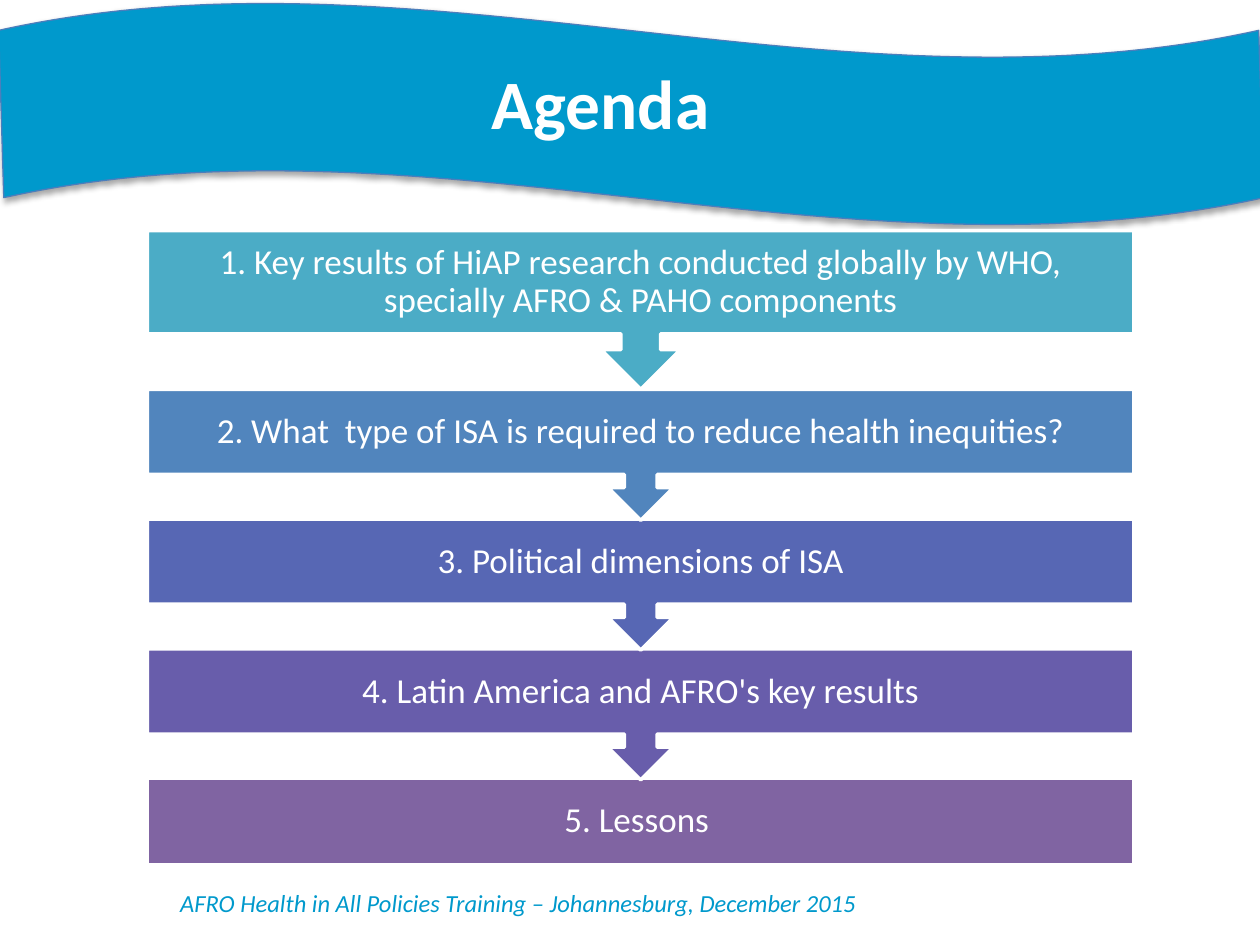
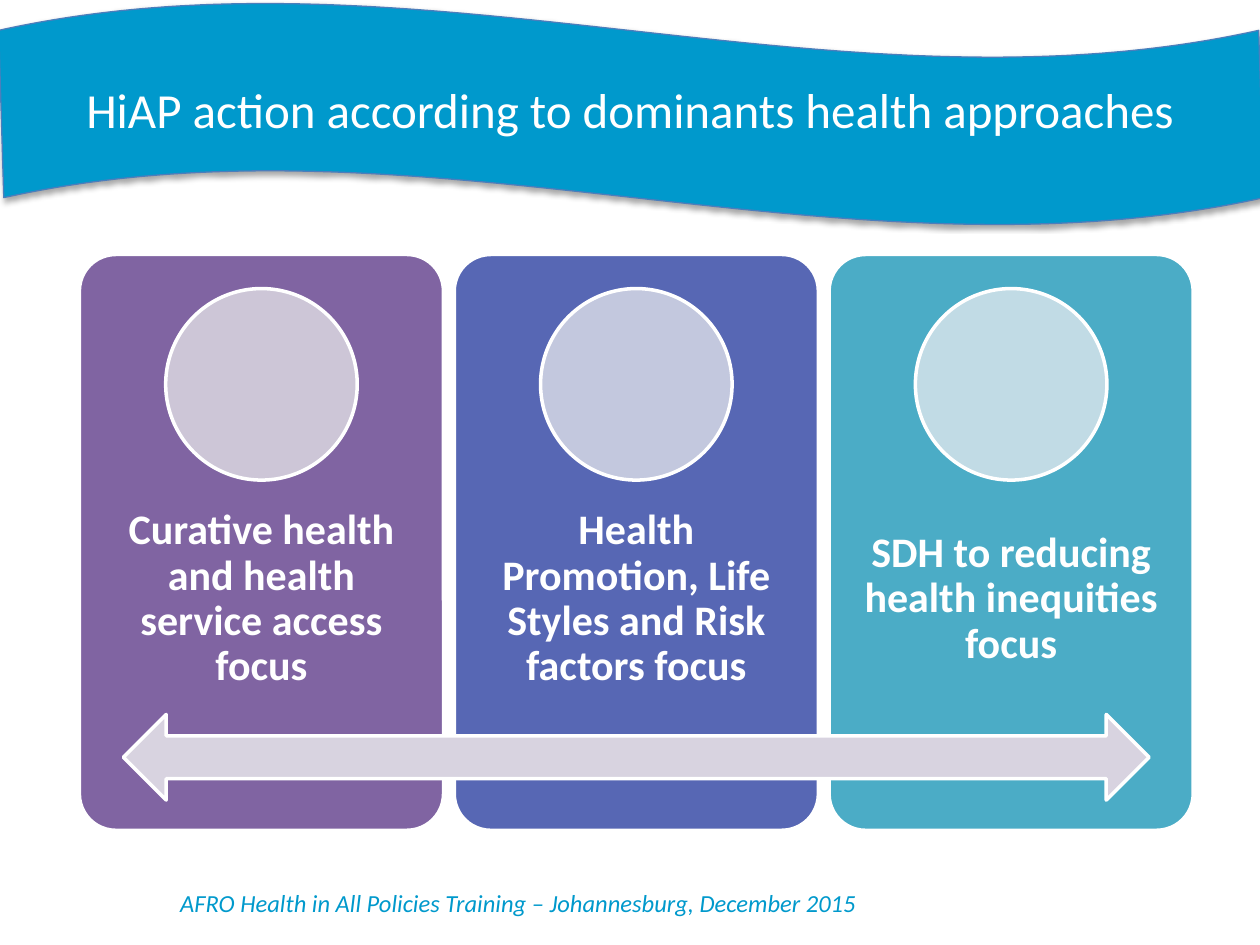
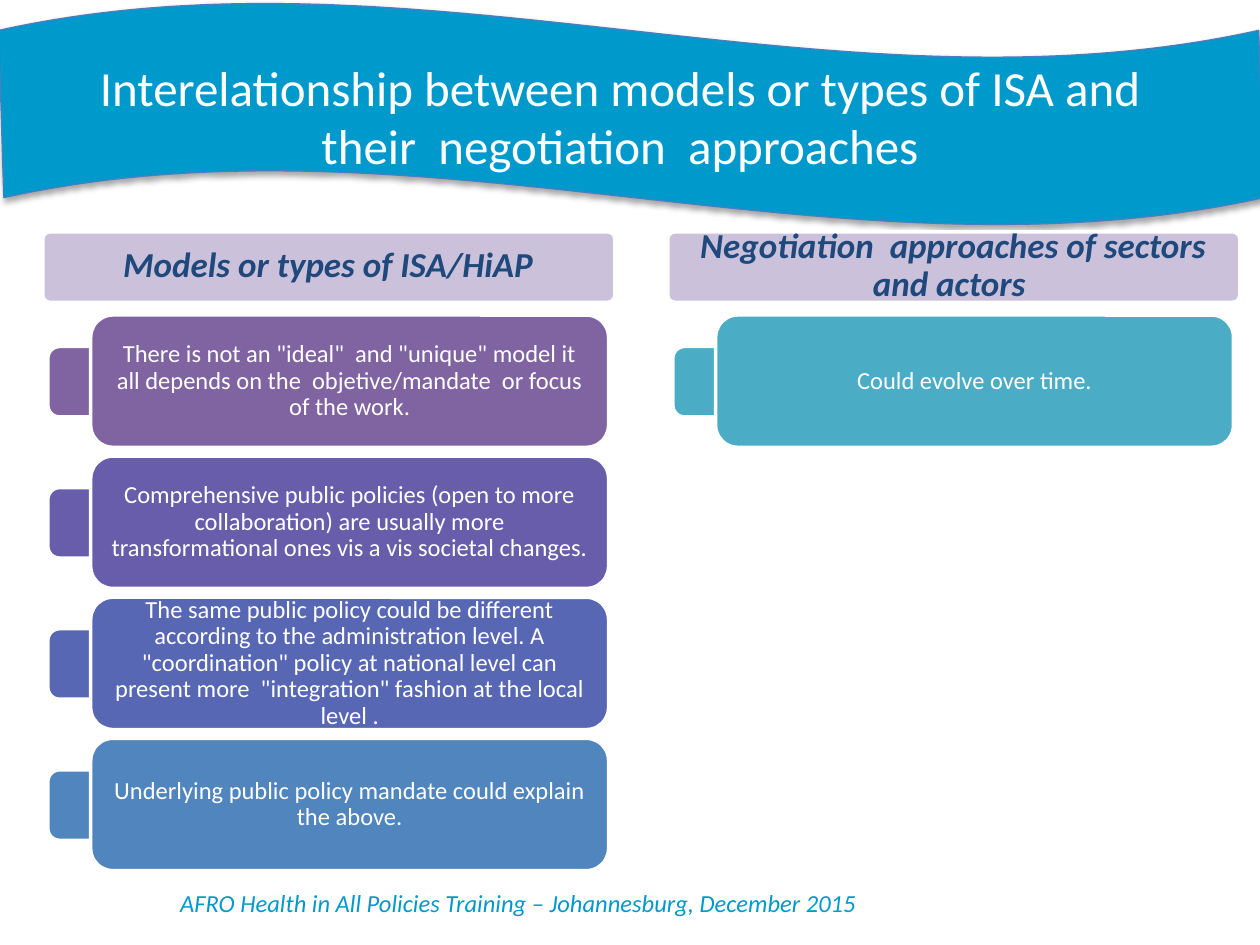
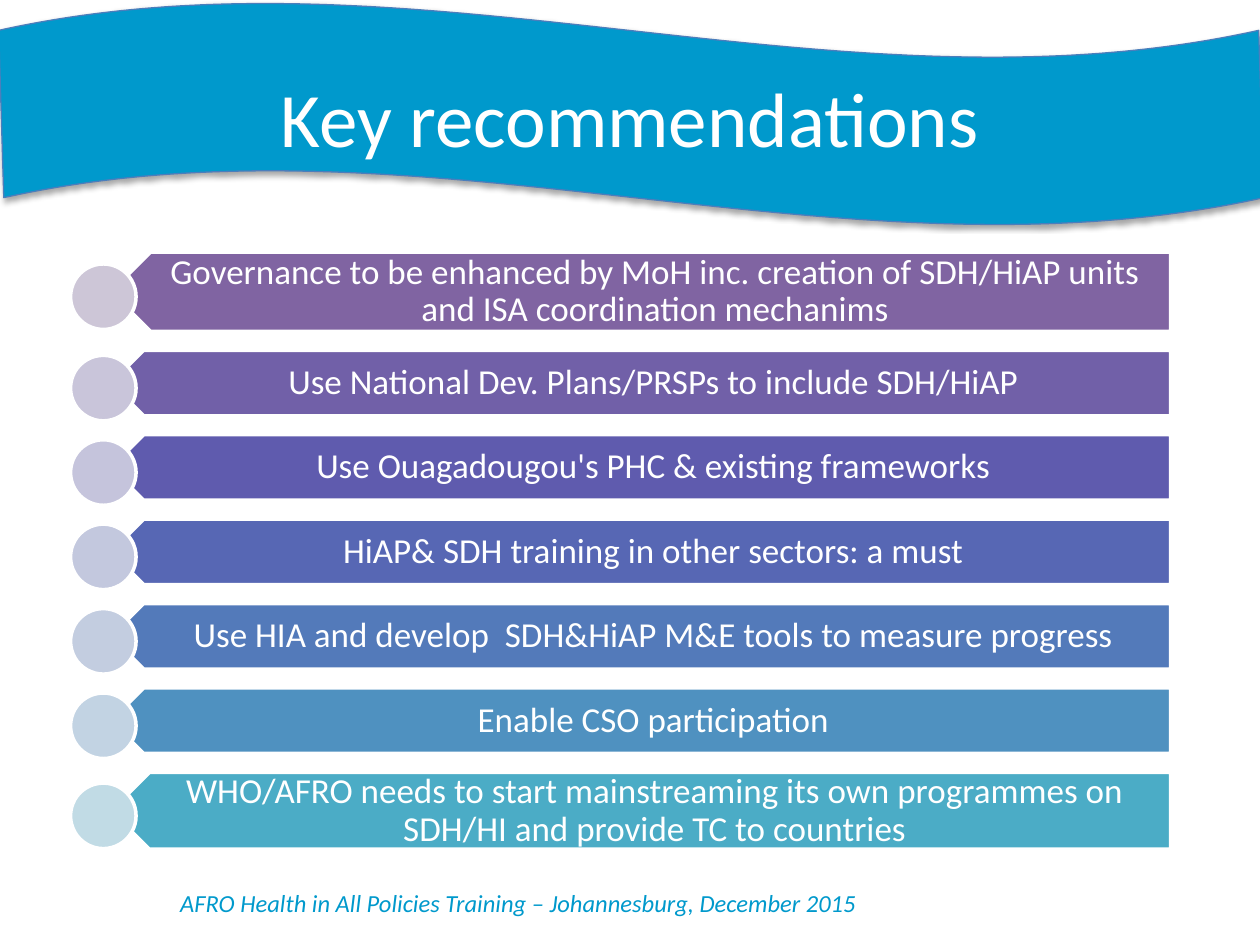
from lxml import etree
from pptx import Presentation
from pptx.dml.color import RGBColor
from pptx.enum.shapes import MSO_SHAPE
from pptx.enum.text import MSO_ANCHOR, PP_ALIGN
from pptx.oxml.ns import qn
from pptx.util import Inches, Pt

RECT, ROUND, OVAL = MSO_SHAPE.RECTANGLE, MSO_SHAPE.ROUNDED_RECTANGLE, MSO_SHAPE.OVAL
CALLOUT, ARROW = MSO_SHAPE.UP_ARROW_CALLOUT, MSO_SHAPE.LEFT_RIGHT_ARROW
PLATE, WAVE = MSO_SHAPE.PENTAGON, MSO_SHAPE.WAVE
TOP, MIDDLE = MSO_ANCHOR.TOP, MSO_ANCHOR.MIDDLE
CENTER = PP_ALIGN.CENTER

# Shared look
FONT = "Calibri"
FOOTER = "AFRO Health in All Policies Training – Johannesburg, December 2015"
WHITE = RGBColor(0xFF, 0xFF, 0xFF)
BAND = RGBColor(0x00, 0x99, 0xCC)
BAND_LINE = RGBColor(0x4B, 0x7E, 0xBC)
NAVY = RGBColor(0x1F, 0x49, 0x7D)
LILAC = RGBColor(0xCC, 0xC1, 0xDA)
PALE_ARROW = RGBColor(0xD8, 0xD3, 0xE0)

# Purple to teal scale, with the pale tints used for circles
PURPLE = RGBColor(0x80, 0x64, 0xA2)
PLUM = RGBColor(0x71, 0x60, 0xA8)
VIOLET = RGBColor(0x68, 0x5D, 0xAB)
IRIS = RGBColor(0x5F, 0x5B, 0xAE)
INDIGO = RGBColor(0x57, 0x67, 0xB4)
COBALT = RGBColor(0x53, 0x7A, 0xBA)
BLUE = RGBColor(0x51, 0x85, 0xBD)
SKY = RGBColor(0x4F, 0x91, 0xC0)
TEAL = RGBColor(0x4B, 0xAC, 0xC6)
TINTS = {
    PURPLE: RGBColor(0xCD, 0xC6, 0xD7),
    PLUM: RGBColor(0xC9, 0xC5, 0xDA),
    IRIS: RGBColor(0xC5, 0xC4, 0xDC),
    INDIGO: RGBColor(0xC3, 0xC8, 0xDE),
    COBALT: RGBColor(0xC3, 0xCD, 0xE0),
    SKY: RGBColor(0xC2, 0xD3, 0xE3),
    TEAL: RGBColor(0xC1, 0xDB, 0xE5),
}


def add_box(s, kind, x, y, w, h, fill, line=WHITE, weight=2, adj=(), rotation=0):
    sp = s.shapes.add_shape(kind, Inches(x), Inches(y), Inches(w), Inches(h))
    sp.shadow.inherit = False
    sp.fill.solid()
    sp.fill.fore_color.rgb = fill
    sp.line.color.rgb = line
    sp.line.width = Pt(weight)
    sp.rotation = rotation
    for i, value in enumerate(adj):
        sp.adjustments[i] = value
    return sp


def add_text(s, text, x, y, w, h, size, color=WHITE, bold=False, italic=False,
             anchor=MIDDLE, insets=(0.1, 0.05, 0.1, 0.05)):
    tf = s.shapes.add_textbox(Inches(x), Inches(y), Inches(w), Inches(h)).text_frame
    tf.word_wrap = True
    tf.vertical_anchor = anchor
    tf.margin_left, tf.margin_top, tf.margin_right, tf.margin_bottom = map(Inches, insets)
    p = tf.paragraphs[0]
    p.alignment = CENTER
    r = p.add_run()
    r.text = text
    r.font.name = FONT
    r.font.size = Pt(size)
    r.font.bold = bold
    r.font.italic = italic
    r.font.color.rgb = color
    return p


def add_label(s, text, x, y, w, h, size, insets, **style):
    """Text laid over a diagram shape, with tight line spacing."""
    p = add_text(s, text, x, y, w, h, size, insets=insets, **style)
    p.line_spacing = 0.9
    p.space_after = Pt(size * 0.35)


def add_band(s):
    sp = add_box(s, WAVE, -0.01, 0.02, 10.04, 1.77, BAND, BAND_LINE, 0.75, (0.125, 0.002))
    effects = sp._element.spPr.find(qn("a:effectLst"))
    shadow = etree.SubElement(effects, qn("a:outerShdw"), blurRad=str(Pt(3.1)),
                              dist=str(Pt(1.8)), dir="5400000", rotWithShape="0")
    color = etree.SubElement(shadow, qn("a:srgbClr"), val="000000")
    etree.SubElement(color, qn("a:alpha"), val="35000")


def new_slide(prs):
    s = prs.slides.add_slide(prs.slide_layouts[6])
    add_text(s, FOOTER, 0.08, 7, 8.07, 0.34, 14, BAND, italic=True, anchor=TOP)
    add_band(s)
    return s


def agenda_slide(prs):
    s = new_slide(prs)
    add_text(s, "Agenda ", 0.33, 0.42, 9, 0.78, 39.6, bold=True)
    # Steps: top, full height with arrow, text height
    steps = [
        ("1. Key results of HiAP research conducted globally by WHO, "
         "specially AFRO & PAHO components", TEAL, 1.83, 1.26, 0.82),
        ("2. What  type of ISA is required to reduce health inequities?", BLUE, 3.09, 1.04, 0.68),
        ("3. Political dimensions of ISA", INDIGO, 4.12, 1.04, 0.68),
        ("4. Latin America and AFRO's key results", VIOLET, 5.15, 1.04, 0.68),
        ("5. Lessons ", PURPLE, 6.18, 0.68, 0.68),
    ]
    # Drawn from the last step up so each arrow lies over the next bar
    for text, color, y, h, text_h in reversed(steps):
        if h > text_h:
            add_box(s, CALLOUT, 1.17, y, 7.83, h, color, rotation=180)
        else:
            add_box(s, RECT, 1.17, y, 7.83, h, color)
        add_label(s, text, 1.17, y, 7.83, text_h, 20, (0.16,) * 4)


def approaches_slide(prs):
    s = new_slide(prs)
    p = add_text(s, "HiAP action according to dominants health approaches",
                 0.5, 0.58, 9, 0.55, 28, anchor=TOP)
    p.space_before = Pt(5.6)
    cards = [
        ("Curative health and health service access focus", PURPLE),
        ("Health Promotion, Life Styles and Risk factors focus", INDIGO),
        ("SDH to reducing health inequities focus", TEAL),
    ]
    card_w, circle = 2.89, 1.52
    for i, (text, color) in enumerate(cards):
        x = 0.63 + i * 2.975
        add_box(s, ROUND, x, 2.02, card_w, 4.57, color, adj=(0.1,))
        add_label(s, text, x, 3.84, card_w, 1.83, 24, (0.19,) * 4, bold=True)
        add_box(s, OVAL, x + (card_w - circle) / 2, 2.29, circle, circle, TINTS[color])
    add_box(s, ARROW, 0.98, 5.67, 8.14, 0.68, PALE_ARROW)


def add_model_column(s, x, heading, items):
    """A heading bar with tabbed boxes below it."""
    add_box(s, ROUND, x, 1.84, 4.54, 0.56, LILAC, adj=(0.1,))
    add_label(s, heading, x + 0.01, 1.85, 4.51, 0.53, 20, (0.04, 0.03, 0.04, 0.03),
              color=NAVY, bold=True, italic=True)
    for i, (text, color) in enumerate(items):
        y = 2.5 + i * 1.12
        add_box(s, ROUND, x + 0.04, y + 0.25, 0.56, 0.56, color)
        add_box(s, ROUND, x + 0.38, y, 4.11, 1.05, color)
        add_label(s, text, x + 0.43, y + 0.05, 4.01, 0.95, 14, (0.11,) * 4)


def models_slide(prs):
    s = new_slide(prs)
    add_text(s, "Interelationship between models or types of ISA and "
             "their  negotiation  approaches", 0.42, 0.42, 9, 1, 28)
    add_model_column(s, 0.34, "Models or types of ISA/HiAP", [
        ('There is not an "ideal"  and "unique" model it all depends on the  '
         "objetive/mandate  or focus of the work.", PURPLE),
        ("Comprehensive public policies (open to more collaboration) are usually more "
         "transformational ones vis a vis societal changes. ", VIOLET),
        ("The same public policy could be different according to the administration level. "
         'A "coordination" policy at national level can present more  "integration" '
         "fashion at the local level .", INDIGO),
        ("Underlying public policy mandate could explain the above.", BLUE),
    ])
    add_model_column(s, 5.3, "Negotiation  approaches of sectors and actors ", [
        ("Could evolve over time.", TEAL),
    ])


def recommendations_slide(prs):
    s = new_slide(prs)
    add_text(s, "Key recommendations", 0.5, 0.3, 9, 1.25, 44)
    rows = [
        ("Governance to be enhanced by MoH inc. creation of SDH/HiAP units "
         "and ISA coordination mechanims", PURPLE, 0.63),
        ("Use National Dev. Plans/PRSPs to include SDH/HiAP", PLUM, 0.52),
        ("Use Ouagadougou's PHC & existing frameworks", IRIS, 0.52),
        ("HiAP& SDH training in other sectors: a must", INDIGO, 0.52),
        ("Use HIA and develop  SDH&HiAP M&E tools to measure progress", COBALT, 0.52),
        ("Enable CSO participation", SKY, 0.52),
        ("WHO/AFRO needs to start mainstreaming its own programmes on "
         "SDH/HI and provide TC to countries", TEAL, 0.61),
    ]
    x, y, w, gap, circle = 0.88, 2, 8.41, 0.15, 0.52
    for text, color, h in rows:
        point = h / 4  # the text starts halfway along the pointed end
        add_box(s, PLATE, x, y, w, h, color, rotation=180)
        add_label(s, text, x + point, y, w - point, h, 20, (0.23, 0.08, 0.16, 0.08))
        add_box(s, OVAL, 0.56, y + (h - circle) / 2 + 0.04, circle, circle, TINTS[color])
        y += h + gap


def main():
    prs = Presentation()
    prs.slide_width, prs.slide_height = Inches(10), Inches(7.5)
    agenda_slide(prs)
    approaches_slide(prs)
    models_slide(prs)
    recommendations_slide(prs)
    prs.save("out.pptx")


if __name__ == "__main__":
    main()
